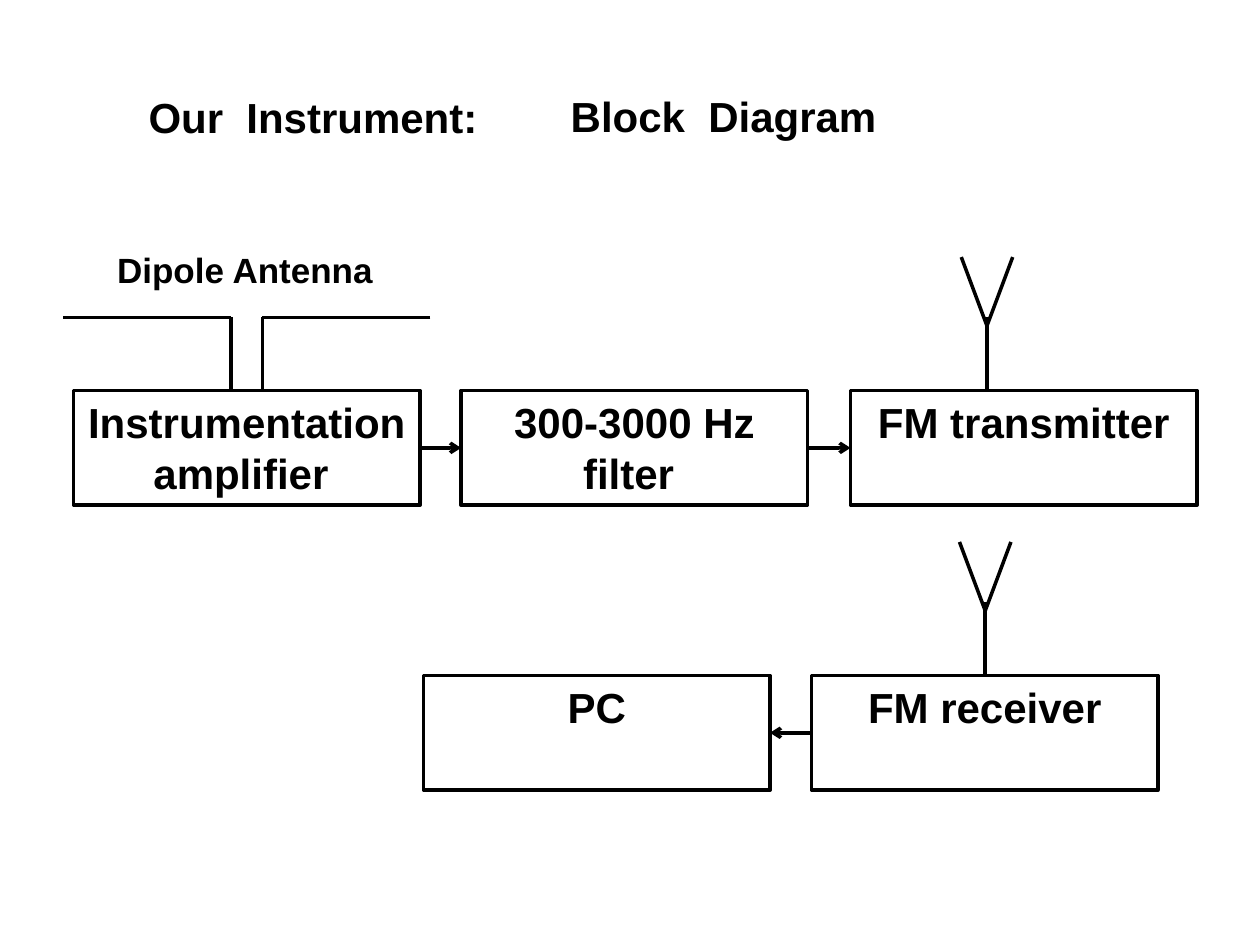
from pptx import Presentation
from pptx.dml.color import RGBColor
from pptx.enum.shapes import MSO_CONNECTOR as CONN, MSO_SHAPE as SHAPE
from pptx.enum.text import MSO_ANCHOR as ANCHOR, MSO_AUTO_SIZE as AUTO, PP_ALIGN as ALIGN
from pptx.oxml.ns import qn
from pptx.util import Pt
from lxml import etree

BLACK = RGBColor(0, 0, 0)
BOX_W, BOX_H = 198, 65.5
TOP_ROW, BOTTOM_ROW = 223.2, 386

prs = Presentation()
prs.slide_width, prs.slide_height = Pt(720), Pt(540)
s = prs.slides.add_slide(prs.slide_layouts[6])


def write(sp, text, size):
    p = sp.text_frame.paragraphs[0]
    p.text = text
    p.font.name, p.font.size, p.font.bold = "Arial", Pt(size), True
    p.font.color.rgb = BLACK
    return p


def add_line(x1, y1, x2, y2):
    c = s.shapes.add_connector(CONN.STRAIGHT, Pt(x1), Pt(y1), Pt(x2), Pt(y2))
    c.line.color.rgb = BLACK
    c.line.width = Pt(2)
    etree.SubElement(c._element.spPr, qn("a:effectLst"))
    return c


for text, x, y, w, h, size in [
    ("Our  Instrument:", 77.8, 49, 204.5, 36, 24),
    ("Block  Diagram", 319, 48.2, 190.8, 36, 24),
    ("Dipole Antenna", 59.8, 138.2, 162, 31.7, 20),
]:
    sp = s.shapes.add_textbox(Pt(x), Pt(y), Pt(w), Pt(h))
    sp.text_frame.word_wrap = False
    sp.text_frame.auto_size = AUTO.SHAPE_TO_FIT_TEXT
    write(sp, text, size)

boxes = {}
for name, text, x, y in [
    ("amplifier", "Instrumentation amplifier ", 42, TOP_ROW),
    ("filter", "300-3000 Hz filter ", 263.5, TOP_ROW),
    ("transmitter", "FM transmitter", 486, TOP_ROW),
    ("receiver", "FM receiver", 463.7, BOTTOM_ROW),
    ("pc", "PC", 242, BOTTOM_ROW),
]:
    sp = s.shapes.add_shape(SHAPE.RECTANGLE, Pt(x), Pt(y), Pt(BOX_W), Pt(BOX_H))
    sp.shadow.inherit = False
    sp.fill.background()
    sp.line.color.rgb = BLACK
    sp.line.width = Pt(2)
    tf = sp.text_frame
    tf.word_wrap = True
    tf.vertical_anchor = ANCHOR.TOP
    write(sp, text, 24).alignment = ALIGN.CENTER
    boxes[name] = sp

dipole_y = 181.4
for outer, inner in [(36, 132), (246, 150)]:
    add_line(outer, dipole_y, inner, dipole_y)
    add_line(inner, dipole_y, inner, TOP_ROW)

for x, box_top in [(564, TOP_ROW), (563, BOTTOM_ROW)]:
    fork = box_top - 37
    add_line(x, fork - 5, x, box_top)
    for dx in (-14.7, 14.7):
        add_line(x + dx, fork - 39.3, x, fork)

for start, end, start_side, end_side in [
    ("amplifier", "filter", 3, 1),
    ("filter", "transmitter", 3, 1),
    ("receiver", "pc", 1, 3),
]:
    c = add_line(0, 0, 0, 0)
    c.begin_connect(boxes[start], start_side)
    c.end_connect(boxes[end], end_side)
    etree.SubElement(c.line._get_or_add_ln(), qn("a:tailEnd"), type="arrow")

prs.save("out.pptx")
